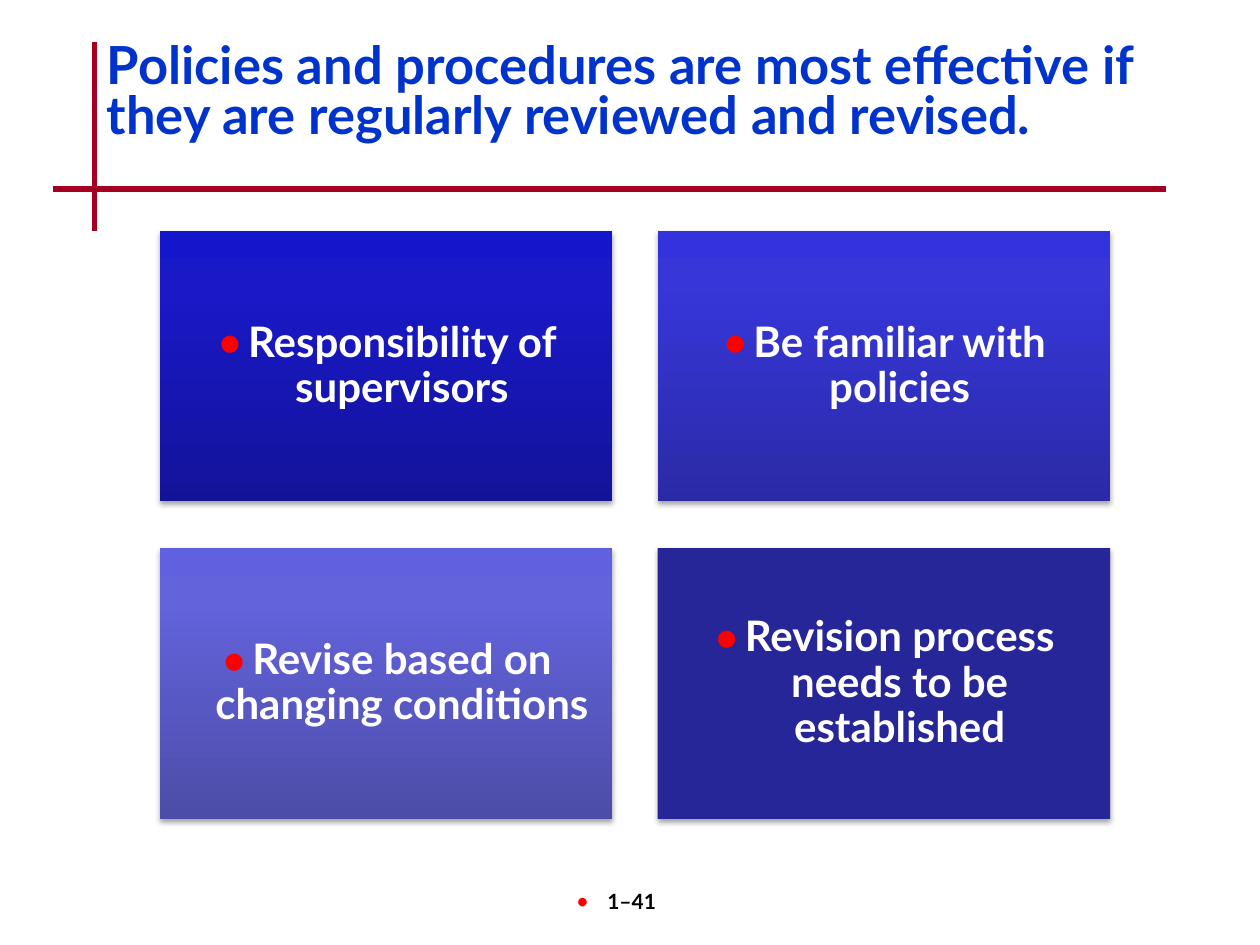
"""Build the slide on reviewing and revising policies and procedures."""
from copy import deepcopy

from lxml import etree
from pptx import Presentation
from pptx.dml.color import RGBColor
from pptx.enum.shapes import MSO_CONNECTOR, MSO_SHAPE
from pptx.enum.text import MSO_ANCHOR, PP_ALIGN
from pptx.oxml.ns import qn
from pptx.util import Inches, Pt

STRAIGHT = MSO_CONNECTOR.STRAIGHT
RECTANGLE = MSO_SHAPE.RECTANGLE
MIDDLE = MSO_ANCHOR.MIDDLE
CENTER = PP_ALIGN.CENTER
FONT = "Lato"
COLORS = {
    "rule": "A50021",
    "title": "0033CC",
    "bullet": "FF0000",
    "card_text": "FFFFFF",
    "number": "000000",
    "shadow": "000000",
}
CARDS = [
    ("Responsibility of supervisors", ["13139A", "1919C8", "1515CC"]),
    ("Be familiar with policies", ["2A2AA7", "3636D9", "3333DD"]),
    ("Revise based on changing conditions", ["4C4CA9", "6363DB", "6161DF"]),
    ("Revision process needs to be established", ["262699"]),
]
STOPS = [0, 0.8, 1]


def write(frame, text, size, color):
    frame.word_wrap = True
    frame.text = text
    paragraph = frame.paragraphs[0]
    font = paragraph.runs[0].font
    font.name, font.size, font.bold = FONT, Pt(size), True
    font.color.rgb = RGBColor.from_string(COLORS[color])
    return paragraph


def add_bullet(paragraph, margin):
    paragraph.alignment = CENTER
    properties = paragraph._p.get_or_add_pPr()
    properties.set("marL", str(Inches(margin)))
    properties.set("indent", str(Inches(-0.25)))
    color = etree.SubElement(properties, qn("a:buClr"))
    etree.SubElement(color, qn("a:srgbClr"), val=COLORS["bullet"])
    etree.SubElement(properties, qn("a:buSzPct"), val="110000")
    etree.SubElement(properties, qn("a:buFont"), typeface=FONT)
    etree.SubElement(properties, qn("a:buChar"), char="•")


presentation = Presentation()
presentation.slide_width, presentation.slide_height = Inches(10), Inches(7.5)
slide = presentation.slides.add_slide(presentation.slide_layouts[6])
shapes = slide.shapes

for ends in [(0.75, 0.33, 0.75, 1.83), (0.42, 1.5, 9.25, 1.5)]:
    rule = shapes.add_connector(STRAIGHT, *map(Inches, ends))
    rule.line.color.rgb = RGBColor.from_string(COLORS["rule"])
    rule.line.width = Pt(3)
    etree.SubElement(rule._element.spPr, qn("a:effectLst"))

page_number = shapes.add_textbox(Inches(3.92), Inches(7), Inches(2.08), Inches(0.5))
add_bullet(write(page_number.text_frame, "1–41", 12, "number"), 0.05)

title = shapes.add_textbox(Inches(0.75), Inches(0.3), Inches(8.5), Inches(1))
heading = write(
    title.text_frame,
    "Policies and procedures are most effective if they are regularly reviewed and revised.",
    30,
    "title",
)
heading.line_spacing = 0.8

for index, (topic, shades) in enumerate(CARDS):
    row, column = divmod(index, 2)
    card = shapes.add_shape(
        RECTANGLE,
        Inches(1.27 + 3.95 * column),
        Inches(1.83 + 2.52 * row),
        Inches(3.59),
        Inches(2.15),
    )
    card.line.fill.background()
    if len(shades) == 1:
        card.fill.solid()
        card.fill.fore_color.rgb = RGBColor.from_string(shades[0])
    else:
        card.fill.gradient()
        card.fill.gradient_angle = 90
        stop_list = card._element.spPr.find(".//" + qn("a:gsLst"))
        stop_list.append(deepcopy(stop_list[0]))
        for stop, position, shade in zip(card.fill.gradient_stops, STOPS, shades):
            stop.position = position
            stop.color.rgb = RGBColor.from_string(shade)

    card.shadow.inherit = False
    effects = card._element.spPr.find(qn("a:effectLst"))
    shadow = etree.SubElement(
        effects, qn("a:outerShdw"), blurRad=str(Pt(3.1)), dist=str(Pt(1.8)),
        dir="5400000", rotWithShape="0",
    )
    shadow_color = etree.SubElement(shadow, qn("a:srgbClr"), val=COLORS["shadow"])
    etree.SubElement(shadow_color, qn("a:alpha"), val="35000")

    frame = card.text_frame
    frame.vertical_anchor = MIDDLE
    frame.margin_left = frame.margin_right = Inches(0.1)
    frame.margin_top = frame.margin_bottom = Inches(0.1)
    point = write(frame, topic, 24, "card_text")
    point.line_spacing = 0.9
    point.space_after = Pt(8)
    add_bullet(point, 0.25)

presentation.save("out.pptx")
